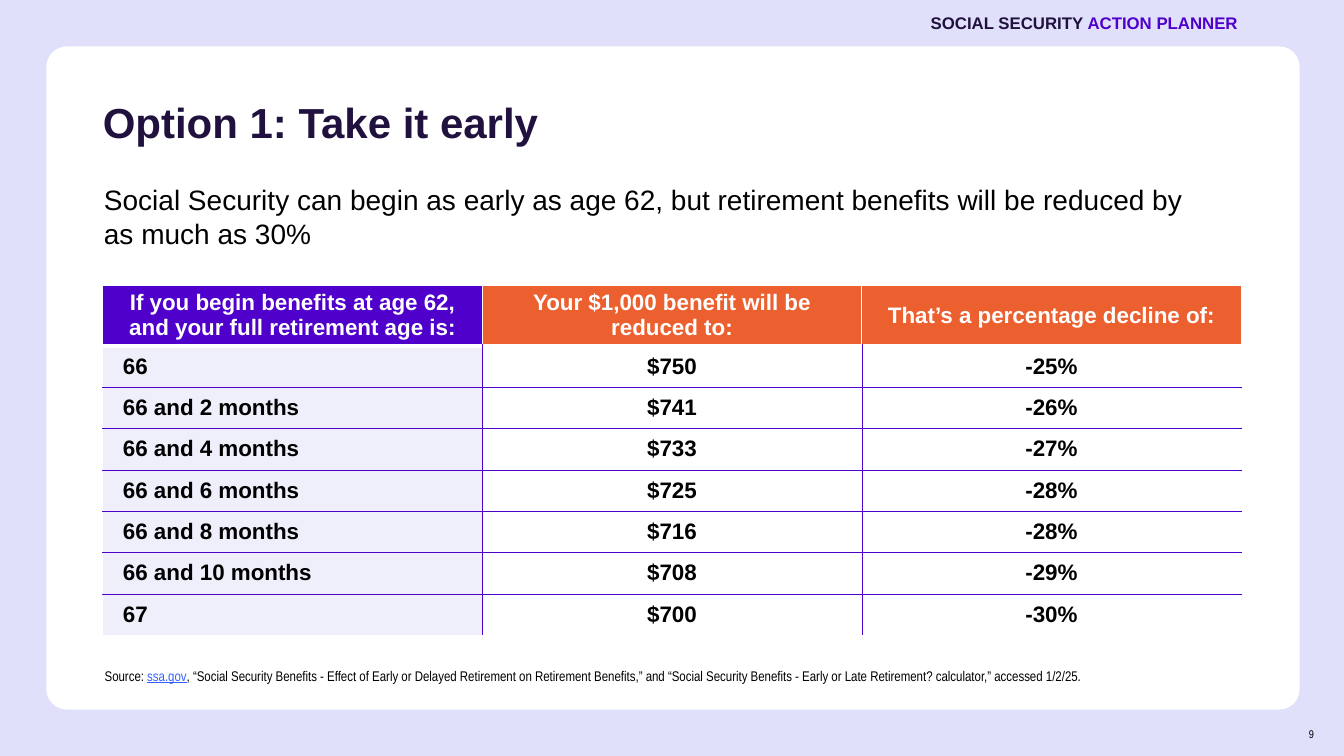
from dataclasses import dataclass

from lxml import etree
from pptx import Presentation
from pptx import util as u
from pptx.dml.color import RGBColor
from pptx.enum import shapes, text
from pptx.oxml import ns

WIDTH, HEIGHT = u.Inches(13.33), u.Inches(7.5)
LEFT, CENTER, RIGHT = text.PP_ALIGN.LEFT, text.PP_ALIGN.CENTER, text.PP_ALIGN.RIGHT
TOP, MIDDLE, BOTTOM = text.MSO_ANCHOR.TOP, text.MSO_ANCHOR.MIDDLE, text.MSO_ANCHOR.BOTTOM


@dataclass(frozen=True)
class Theme:
    font: str = "Arial"
    narrow: str = "Arial Narrow"
    lavender: str = "E0E0FB"
    white: str = "FFFFFF"
    navy: str = "20113E"
    purple: str = "4F00CA"
    orange: str = "EC602F"
    black: str = "000000"
    link: str = "3461FF"
    title: int = 30
    lead: int = 20
    table: int = 16
    banner: int = 12
    source: int = 10
    page: int = 8


THEME = Theme()

HEADERS = [
    "If you begin benefits at age 62, and your full retirement age is:",
    "Your $1,000 benefit will be reduced to:",
    "That’s a percentage decline of:",
]
REDUCTIONS = [
    ("66", "$750", "-25%"),
    ("66 and 2 months", "$741", "-26%"),
    ("66 and 4 months", "$733", "-27%"),
    ("66 and 6 months", "$725", "-28%"),
    ("66 and 8 months", "$716", "-28%"),
    ("66 and 10 months", "$708", "-29%"),
    ("67", "$700", "-30%"),
]


def across(share):
    return round(WIDTH * share / 100)


def down(share):
    return round(HEIGHT * share / 100)


def box(left, top, width, height):
    """Turn percentages of the slide into a left, top, width, height tuple."""
    return across(left), down(top), across(width), down(height)


def rgb(color):
    return RGBColor.from_string(color)


def write(tf, content, *, size, color=THEME.black, font=THEME.font, bold=False,
          align=LEFT, line=1.0):
    """Fill one paragraph; content is a string or (text, color, underline) runs."""
    p = tf.paragraphs[0]
    p.alignment, p.line_spacing, p.space_before = align, line, u.Pt(0)
    runs = [(content, color, False)] if isinstance(content, str) else content
    for words, run_color, underline in runs:
        r = p.add_run()
        r.text = words
        r.font.name, r.font.size, r.font.bold = font, u.Pt(size), bold
        r.font.underline = underline
        r.font.color.rgb = rgb(run_color)
    return p


def set_frame(tf, anchor):
    tf.word_wrap = True
    tf.auto_size = text.MSO_AUTO_SIZE.NONE
    tf.vertical_anchor = anchor


def fill_placeholder(sp, place, content, **style):
    sp.left, sp.top, sp.width, sp.height = place
    set_frame(sp.text_frame, TOP)
    pPr = sp.text_frame.paragraphs[0]._p.get_or_add_pPr()
    pPr.set("marL", "0")
    pPr.set("indent", "0")
    etree.SubElement(pPr, ns.qn("a:buNone"))
    write(sp.text_frame, content, **style)


def add_label(slide, place, content, anchor=MIDDLE, **style):
    tf = slide.shapes.add_textbox(*place).text_frame
    set_frame(tf, anchor)
    write(tf, content, **style)


def add_card(slide):
    """Place the white rounded panel behind everything else."""
    sp = slide.shapes.add_shape(shapes.MSO_SHAPE.ROUNDED_RECTANGLE,
                                *box(3.45, 6.13, 93.25, 87.73))
    sp.adjustments[0] = 0.031
    sp.shadow.inherit = False
    sp.fill.solid()
    sp.fill.fore_color.rgb = rgb(THEME.white)
    sp.line.fill.background()
    sp.element.getparent().insert(2, sp.element)


def set_border(cell, side, color, width):
    ln = etree.SubElement(cell._tc.get_or_add_tcPr(), ns.qn(f"a:ln{side}"),
                          w=str(u.Pt(width)))
    fill = etree.SubElement(ln, ns.qn("a:solidFill"))
    etree.SubElement(fill, ns.qn("a:srgbClr"), val=color)


def set_borders(cell, row, col):
    """White on the outer edges and around the header, thin purple inside."""
    last_row, last_col = len(REDUCTIONS), len(HEADERS) - 1
    is_white = {"L": col == 0, "R": col == last_col, "T": row == 1, "B": row == last_row}
    for side, white in is_white.items():
        if row == 0:
            set_border(cell, side, THEME.white, 3 if side == "B" else 1)
        elif white:
            set_border(cell, side, THEME.white, 1)
        else:
            set_border(cell, side, THEME.purple, 0.25)


def set_fill(cell, color, opacity=100):
    cell.fill.solid()
    cell.fill.fore_color.rgb = rgb(color)
    if opacity < 100:
        clr = cell._tc.tcPr.find(ns.qn("a:solidFill")).find(ns.qn("a:srgbClr"))
        etree.SubElement(clr, ns.qn("a:alpha"), val=str(opacity * 1000))


def add_reduction_table(slide):
    rows = [HEADERS, *REDUCTIONS]
    place = box(7.65, 37.73, 84.7, 46.27)
    table = slide.shapes.add_table(len(rows), len(HEADERS), *place).table
    table.first_row = table.horz_banding = False
    for column in table.columns:
        column.width = place[2] // len(HEADERS)
    for i, values in enumerate(rows):
        header = i == 0
        table.rows[i].height = down(8 if header else 5.47)
        for j, value in enumerate(values):
            cell = table.cell(i, j)
            cell.vertical_anchor = MIDDLE
            set_borders(cell, i, j)
            age = j == 0 and not header
            if header:
                set_fill(cell, THEME.purple if j == 0 else THEME.orange)
            elif age:
                set_fill(cell, THEME.lavender, opacity=50)
                cell.margin_left = across(1.5)
            else:
                set_fill(cell, THEME.white)
            write(cell.text_frame, value, size=THEME.table, bold=True,
                  color=THEME.white if header else THEME.black,
                  align=LEFT if age else CENTER)


def main():
    prs = Presentation()
    prs.slide_width, prs.slide_height = WIDTH, HEIGHT
    slide = prs.slides.add_slide(prs.slide_layouts[1])
    slide.background.fill.solid()
    slide.background.fill.fore_color.rgb = rgb(THEME.lavender)

    add_card(slide)
    fill_placeholder(slide.shapes.title, box(6.9, 12.8, 89.12, 12.27),
                     "Option 1: Take it early", size=THEME.title,
                     color=THEME.navy, bold=True, line=0.9)
    add_label(slide, box(50, 0, 42.84, 6),
              [("SOCIAL SECURITY", THEME.navy, False),
               (" ACTION PLANNER", THEME.purple, False)],
              size=THEME.banner, bold=True, align=RIGHT)
    fill_placeholder(slide.placeholders[1], box(6.98, 23.47, 84.4, 12.27),
                     "Social Security can begin as early as age 62, but retirement "
                     "benefits will be reduced by as much as 30%", size=THEME.lead)
    add_reduction_table(slide)
    add_label(slide, box(7.05, 85.73, 84.4, 5.47),
              [("Source: ", THEME.black, False),
               ("ssa.gov", THEME.link, True),
               (", “Social Security Benefits - Effect of Early or Delayed Retirement on "
                "Retirement Benefits,” and “Social Security Benefits - Early or Late "
                "Retirement? calculator,” accessed 1/2/25.", THEME.black, False)],
              anchor=BOTTOM, size=THEME.source, font=THEME.narrow)
    add_label(slide, box(93.25, 94.4, 5.25, 5.33), "9",
              size=THEME.page, font=THEME.narrow, align=RIGHT)
    prs.save("out.pptx")


if __name__ == "__main__":
    main()
